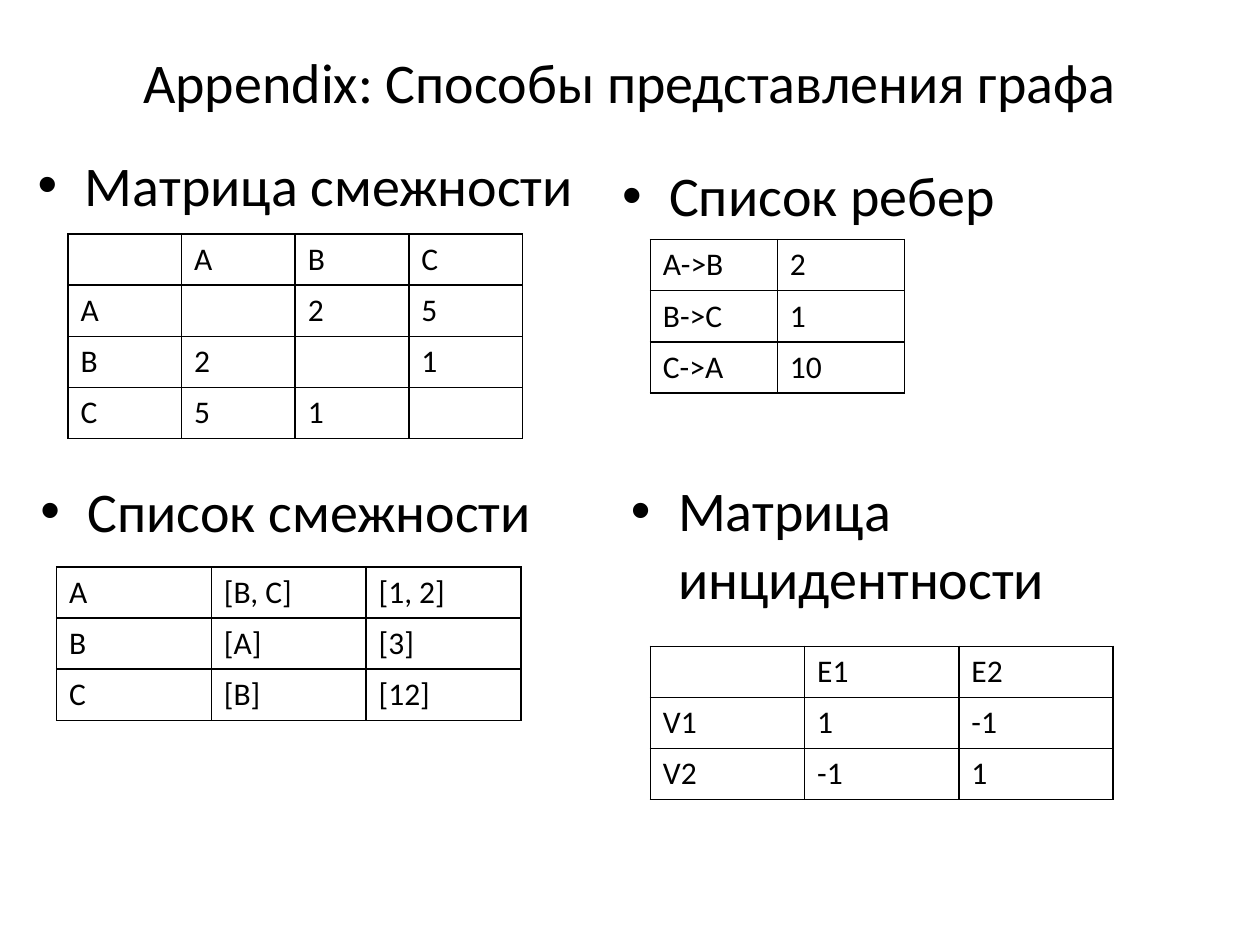
"""Build a slide that compares four ways to represent a graph."""
from lxml import etree
from pptx import Presentation
from pptx.dml.color import RGBColor
from pptx.enum.text import MSO_ANCHOR, MSO_AUTO_SIZE, PP_ALIGN
from pptx.oxml.ns import qn
from pptx.util import Cm, Pt

CENTER = PP_ALIGN.CENTER
TOP, MIDDLE = MSO_ANCHOR.TOP, MSO_ANCHOR.MIDDLE
NO_AUTOFIT = MSO_AUTO_SIZE.NONE

COLORS = {"ink": "000000"}
FONT = "Calibri"
HEADING_SIZE, CELL_SIZE = 32, 18
ROW_HEIGHT = 1.03
BULLET_INDENT = 0.95
BORDER_WIDTH = 0.96

TITLE = "Appendix: Способы представления графа"
TITLE_BOX = (1.27, 0.76, 22.86, 1.75)
REPRESENTATIONS = [
    {"heading": "Список смежности", "box": (0.56, 9.47, 14.15, 6.32),
     "corner": (1.14, 11.43), "column": 3.12,
     "rows": [("A", "[B, C]", "[1, 2]"), ("B", "[A]", "[3]"), ("C", "[B]", "[12]")]},
    {"heading": "Матрица смежности", "box": (0.51, 2.9, 11.48, 6.5),
     "corner": (1.37, 4.72), "column": 2.29,
     "rows": [("", "A", "B", "C"), ("A", "", "2", "5"),
              ("B", "2", "", "1"), ("C", "5", "1", "")]},
    {"heading": "Список ребер", "box": (12.29, 3.12, 11.4, 6.5),
     "corner": (13.11, 4.83), "column": 2.56,
     "rows": [("A->B", "2"), ("B->C", "1"), ("C->A", "10")]},
    {"heading": "Матрица инцидентности", "box": (12.47, 9.47, 11.53, 8.66),
     "corner": (13.11, 13.03), "column": 3.11,
     "rows": [("", "E1", "E2"), ("V1", "1", "-1"), ("V2", "-1", "1")]},
]


def format_runs(paragraph, size):
    for run in paragraph.runs:
        run.font.name = FONT
        run.font.size = Pt(size)
        run.font.color.rgb = RGBColor.from_string(COLORS["ink"])


def fill_text(holder, text, box, anchor):
    holder.left, holder.top, holder.width, holder.height = map(Cm, box)
    frame = holder.text_frame
    frame.text = text
    frame.word_wrap = True
    frame.auto_size = NO_AUTOFIT
    frame.vertical_anchor = anchor
    paragraph = frame.paragraphs[0]
    format_runs(paragraph, HEADING_SIZE)
    return paragraph


def add_bullet(paragraph):
    paragraph.space_before = Pt(HEADING_SIZE * 0.2)
    properties = paragraph._p.get_or_add_pPr()
    properties.set("marL", str(Cm(BULLET_INDENT)))
    properties.set("indent", str(-Cm(BULLET_INDENT)))
    etree.SubElement(properties, qn("a:buFont"), typeface="Arial")
    etree.SubElement(properties, qn("a:buChar"), char="•")


def add_borders(cell):
    properties = cell._tc.get_or_add_tcPr()
    for side in ("lnL", "lnR", "lnT", "lnB"):
        line = etree.SubElement(properties, qn(f"a:{side}"), w=str(Pt(BORDER_WIDTH)))
        fill = etree.SubElement(line, qn("a:solidFill"))
        etree.SubElement(fill, qn("a:srgbClr"), val=COLORS["ink"])


def add_grid(slide, rows, corner, column_width):
    size = (column_width * len(rows[0]), ROW_HEIGHT * len(rows))
    grid = slide.shapes.add_table(len(rows), len(rows[0]), *map(Cm, corner + size)).table
    grid.first_row = grid.horz_banding = False
    for column in grid.columns:
        column.width = Cm(column_width)
    for row, values in zip(grid.rows, rows):
        row.height = Cm(ROW_HEIGHT)
        for cell, value in zip(row.cells, values):
            cell.text = value
            format_runs(cell.text_frame.paragraphs[0], CELL_SIZE)
            add_borders(cell)
            cell.fill.background()


def main():
    deck = Presentation()
    deck.slide_width, deck.slide_height = Cm(25.4), Cm(19.05)
    slide = deck.slides.add_slide(deck.slide_layouts[1])
    fill_text(slide.shapes.title, TITLE, TITLE_BOX, MIDDLE).alignment = CENTER
    for index, item in enumerate(REPRESENTATIONS):
        if index == 0:
            holder = slide.placeholders[1]
        else:
            holder = slide.shapes.add_textbox(*map(Cm, item["box"]))
        add_bullet(fill_text(holder, item["heading"], item["box"], TOP))
        add_grid(slide, item["rows"], item["corner"], item["column"])
    deck.save("out.pptx")


if __name__ == "__main__":
    main()
